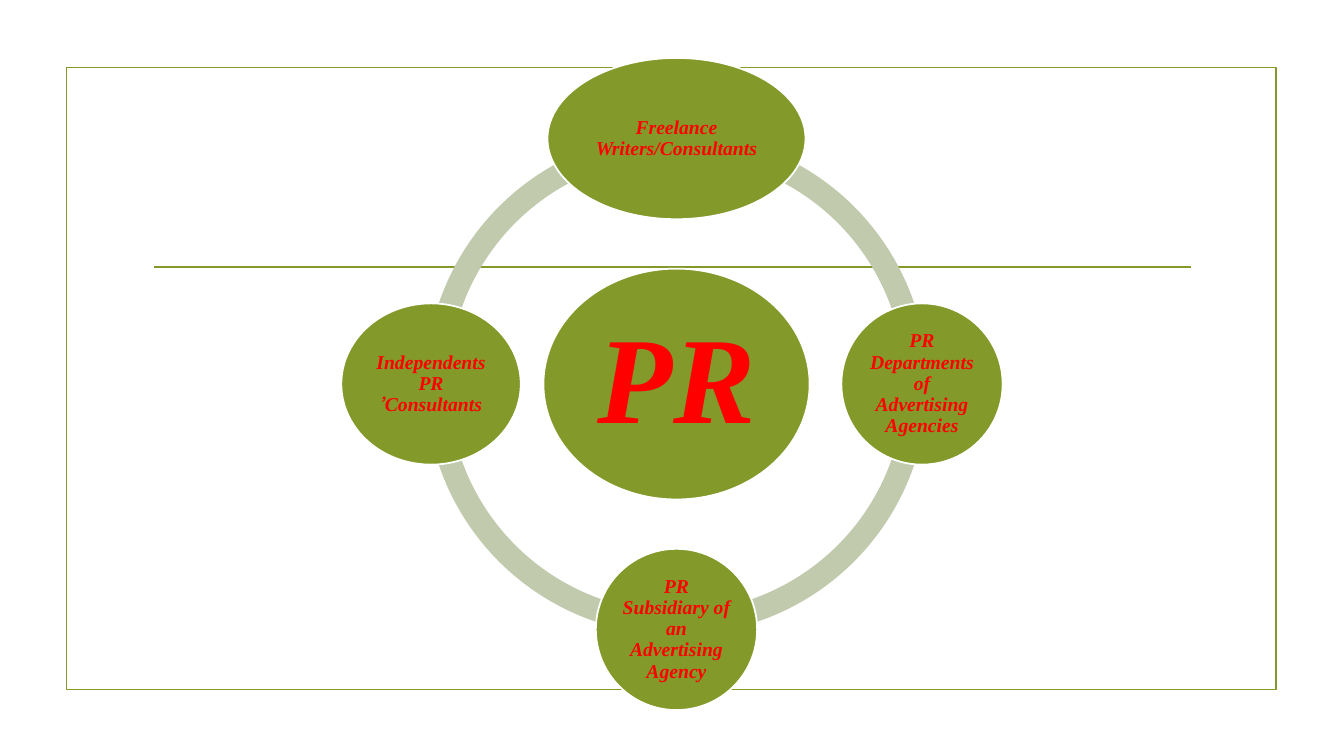
"""Build a slide with a PR hub and four kinds of PR providers on a ring."""
from dataclasses import dataclass
from pptx import Presentation
from pptx.dml.color import RGBColor
from pptx.enum import shapes as kinds, text
from pptx.util import Inches, Pt
from lxml import etree

HUB = ("PR", 2.64, 2.29)
NODES = [
    ("Freelance Writers/Consultants", 2.56, 0, -1),
    ("PR Departments of Advertising Agencies", 1.6, 1, 0),
    ("PR Subsidiary of an Advertising Agency", 1.6, 0, 1),
    ("Independents PR Consultants’", 1.78, -1, 0),
]
ARCS = [(108, 162), (54, 108), (0, 54), (162, 0)]
MID_X, MID_Y = 6.71, 3.81
ORBIT, RING, TALL = 2.435, 4.98, 1.6
FRAME = (0.66, 0.67, 12, 6.17)
RULE = (1.53, 2.65, 11.81, 2.65)


@dataclass(frozen=True)
class Theme:
    green: RGBColor = RGBColor(0x83, 0x99, 0x2A)
    pale: RGBColor = RGBColor(0xC1, 0xCA, 0xAD)
    white: RGBColor = RGBColor(0xFF, 0xFF, 0xFF)
    red: RGBColor = RGBColor(0xFF, 0, 0)
    font: str = "Times New Roman"
    big: int = 88
    small: int = 14
    line: float = 1.25


LOOK = Theme()


def draw(slide, kind, box, fill=None, line=None):
    shape = slide.shapes.add_shape(kind, *map(Inches, box))
    shape.shadow.inherit = False
    if fill is None:
        shape.fill.background()
    else:
        shape.fill.solid()
        shape.fill.fore_color.rgb = fill
    if line is None:
        shape.line.fill.background()
    else:
        shape.line.color.rgb = line
        shape.line.width = Pt(LOOK.line)
    return shape


def bubble(slide, label, x, y, wide, tall, size, inset):
    box = (x - wide / 2, y - tall / 2, wide, tall)
    oval = draw(slide, kinds.MSO_SHAPE.OVAL, box, LOOK.green, LOOK.white)
    frame = oval.text_frame
    frame.word_wrap = True
    frame.vertical_anchor = text.MSO_ANCHOR.MIDDLE
    frame.margin_left = frame.margin_right = Inches(inset)
    frame.margin_top = frame.margin_bottom = Inches(inset)
    para = frame.paragraphs[0]
    para.text = label
    para.alignment = text.PP_ALIGN.CENTER
    para.line_spacing = 0.9
    para._p.get_or_add_pPr().set("rtl", "1")
    font = para.font
    font.name, font.size = LOOK.font, Pt(size)
    font.bold = font.italic = True
    font.color.rgb = LOOK.red


def main():
    deck = Presentation()
    deck.slide_width, deck.slide_height = Inches(13.33), Inches(7.5)
    slide = deck.slides.add_slide(deck.slide_layouts[6])

    draw(slide, kinds.MSO_SHAPE.RECTANGLE, FRAME, line=LOOK.green)
    rule = slide.shapes.add_connector(
        kinds.MSO_CONNECTOR.STRAIGHT, *map(Inches, RULE))
    rule.line.color.rgb = LOOK.green
    rule.line.width = Pt(LOOK.line)
    space = "{http://schemas.openxmlformats.org/drawingml/2006/main}"
    etree.SubElement(rule._element.spPr, space + "effectLst")

    ring = (MID_X - RING / 2, MID_Y - RING / 2, RING, RING)
    for start, end in ARCS:
        arc = draw(slide, kinds.MSO_SHAPE.BLOCK_ARC, ring, LOOK.pale)
        for i, value in enumerate((start, end, 0.046)):
            arc.adjustments[i] = value

    label, wide, tall = HUB
    bubble(slide, label, MID_X, MID_Y, wide, tall, LOOK.big, 0.12)
    for label, wide, across, down in NODES:
        x, y = MID_X + across * ORBIT, MID_Y + down * ORBIT
        bubble(slide, label, x, y, wide, TALL, LOOK.small, 0.02)
    deck.save("out.pptx")


if __name__ == "__main__":
    main()
